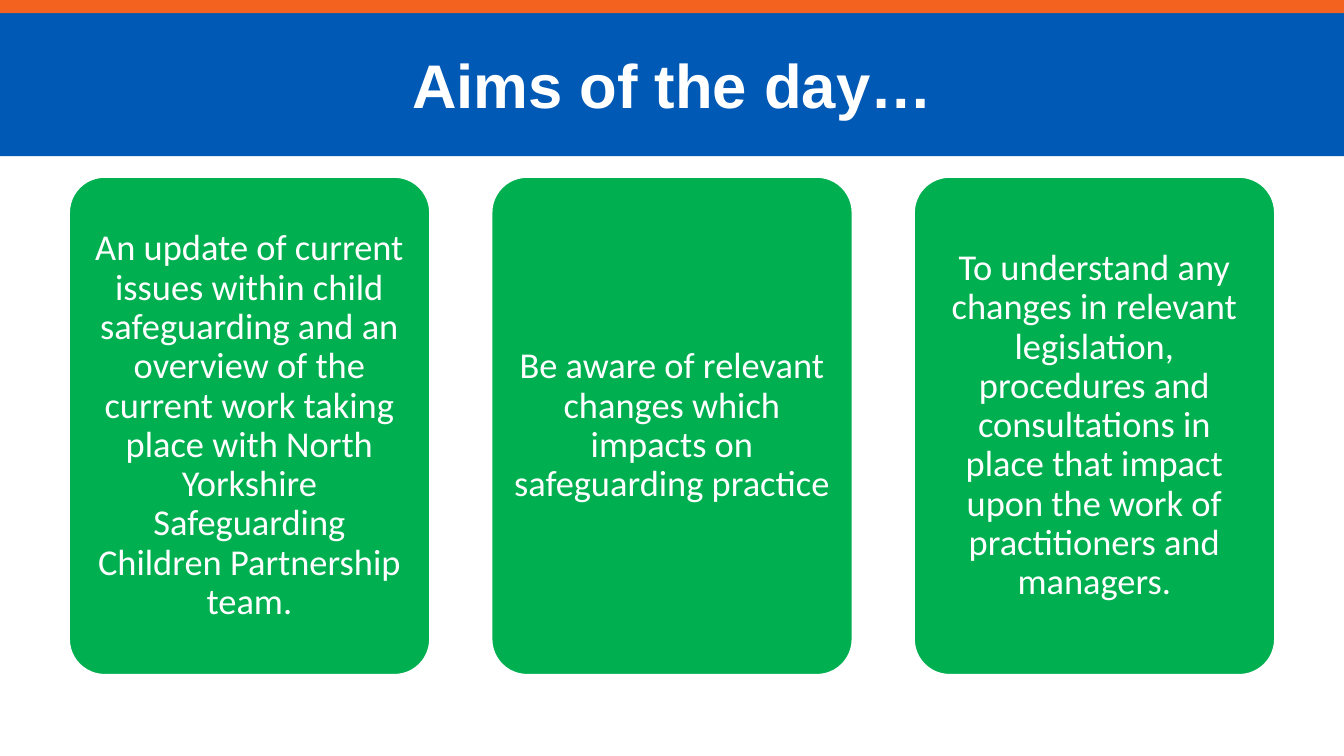
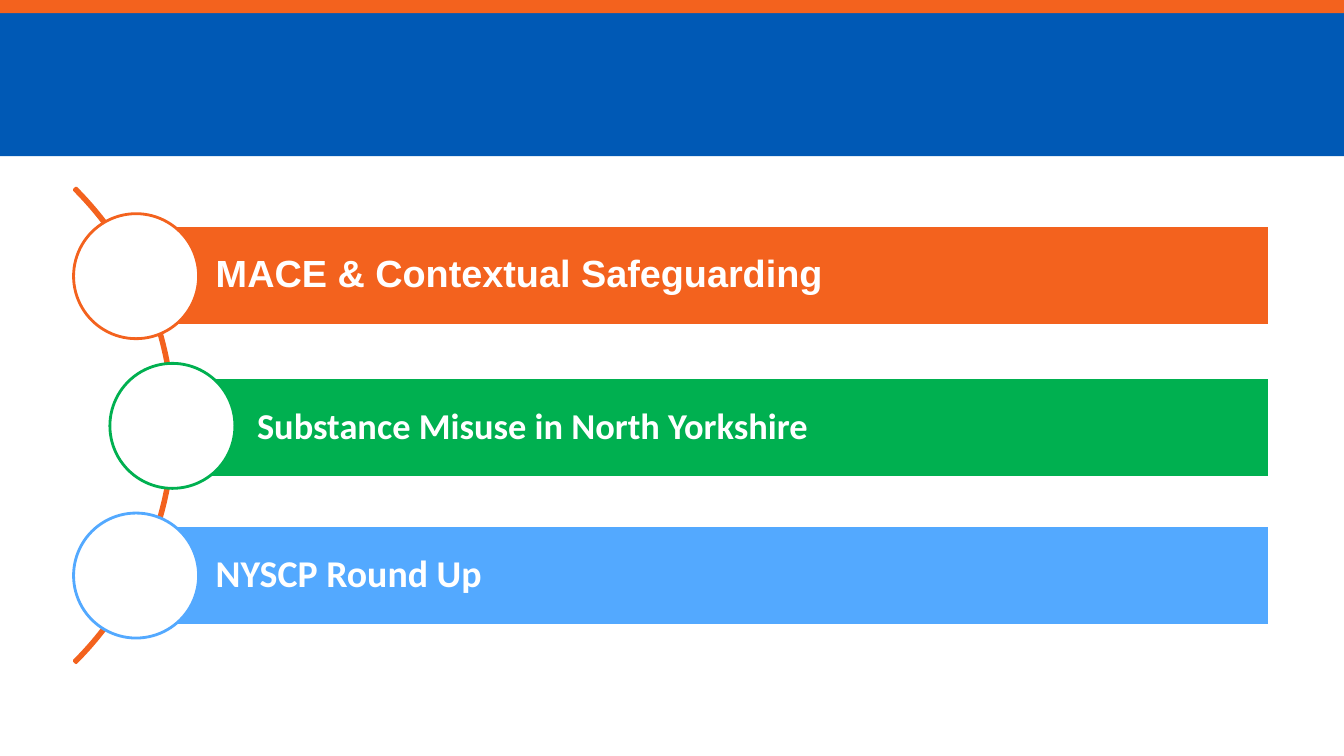
from pptx import Presentation
from pptx import util as u
from pptx.dml.color import RGBColor
from pptx.enum import shapes, text

BLUE, ORANGE, GREEN, SKY, WHITE = "0059B5", "F3621E", "00B050", "53A9FF", "FFFFFF"
W, H = 13.33, 7.5
MS = shapes.MSO_SHAPE

AIMS_TITLE = "Aims of the day…"
AIMS = [
    "An update of current issues within child safeguarding and an overview of the "
    "current work taking place with North Yorkshire Safeguarding Children Partnership team.",
    "Be aware of relevant changes which impacts on safeguarding practice",
    "To understand any changes in relevant legislation, procedures and consultations "
    "in place that impact upon the work of practitioners and managers.",
]
# label, colour, font, size, bar left, bar top, circle left
TOPICS = [
    ("MACE & Contextual Safeguarding", ORANGE, "Arial", 27, 1.35, 2.24, 0.73),
    ("Substance Misuse in North Yorkshire", GREEN, "Calibri", 26, 1.76, 3.75, 1.09),
    ("NYSCP Round Up", SKY, "Calibri", 27, 1.35, 5.21, 0.73),
]


def rgb(value):
    return RGBColor.from_string(value)


def add_shape(s, kind, box, fill=None, line=None, adj=()):
    sp = s.shapes.add_shape(kind, *map(u.Inches, box))
    sp.shadow.inherit = False
    for i, value in enumerate(adj):
        sp.adjustments[i] = value
    if fill:
        sp.fill.solid()
        sp.fill.fore_color.rgb = rgb(fill)
    else:
        sp.fill.background()
    if line:
        sp.line.color.rgb = rgb(line)
        sp.line.width = u.Pt(2)
    else:
        sp.line.fill.background()
    return sp


def set_text(sp, words, font, size, align, insets, bold=False, spacing=0.9):
    tf = sp.text_frame
    tf.word_wrap = True
    tf.vertical_anchor = text.MSO_ANCHOR.MIDDLE
    tf.margin_left, tf.margin_top, tf.margin_right, tf.margin_bottom = map(u.Inches, insets)
    tf.text = words
    p = tf.paragraphs[0]
    p.alignment, p.line_spacing = align, spacing
    f = p.runs[0].font
    f.name, f.size, f.bold = font, u.Pt(size), bold
    f.color.rgb = rgb(WHITE)


def add_slide(prs, title=None):
    s = prs.slides.add_slide(prs.slide_layouts[6])
    add_shape(s, MS.RECTANGLE, (0, 0, W, 1.55), BLUE)
    add_shape(s, MS.RECTANGLE, (0, 0, W, 0.13), ORANGE)
    if title:
        box = s.shapes.add_textbox(*map(u.Inches, (0.67, 0.21, 12, 1.25)))
        set_text(box, title, "Arial", 44, text.PP_ALIGN.CENTER,
                 (0.1, 0.05, 0.1, 0.05), bold=True, spacing=1.0)
    return s


def build_aims(prs):
    s = add_slide(prs, AIMS_TITLE)
    margin, width = 0.68, 3.59
    pitch = (W - 2 * margin - width) / (len(AIMS) - 1)
    for i, aim in enumerate(AIMS):
        card = add_shape(s, MS.ROUNDED_RECTANGLE, (margin + i * pitch, 1.75, width, 4.95),
                         GREEN, WHITE, adj=[0.1])
        # rounded corners add about 0.1 in to each inset
        set_text(card, aim, "Calibri", 26, text.PP_ALIGN.CENTER, [0.11] * 4)


def build_topics(prs):
    s = add_slide(prs)
    add_shape(s, MS.BLOCK_ARC, (-4.93, 0.89, 6.66, 6.66), line=ORANGE, adj=[189, 27, 0.004])
    right, bar_h, circle = 12.59, 0.99, 1.24
    first_top, pitch = 2.12, 1.485
    for i, (label, colour, font, size, left, top, circle_left) in enumerate(TOPICS):
        bar = add_shape(s, MS.RECTANGLE, (left, top, right - left, bar_h), colour, WHITE)
        set_text(bar, label, font, size, text.PP_ALIGN.LEFT, (0.79, 0.07, 0.07, 0.07), bold=True)
        add_shape(s, MS.OVAL, (circle_left, first_top + i * pitch, circle, circle), WHITE, colour)


def main():
    prs = Presentation()
    prs.slide_width, prs.slide_height = u.Inches(W), u.Inches(H)
    build_aims(prs)
    build_topics(prs)
    prs.save("out.pptx")


if __name__ == "__main__":
    main()
